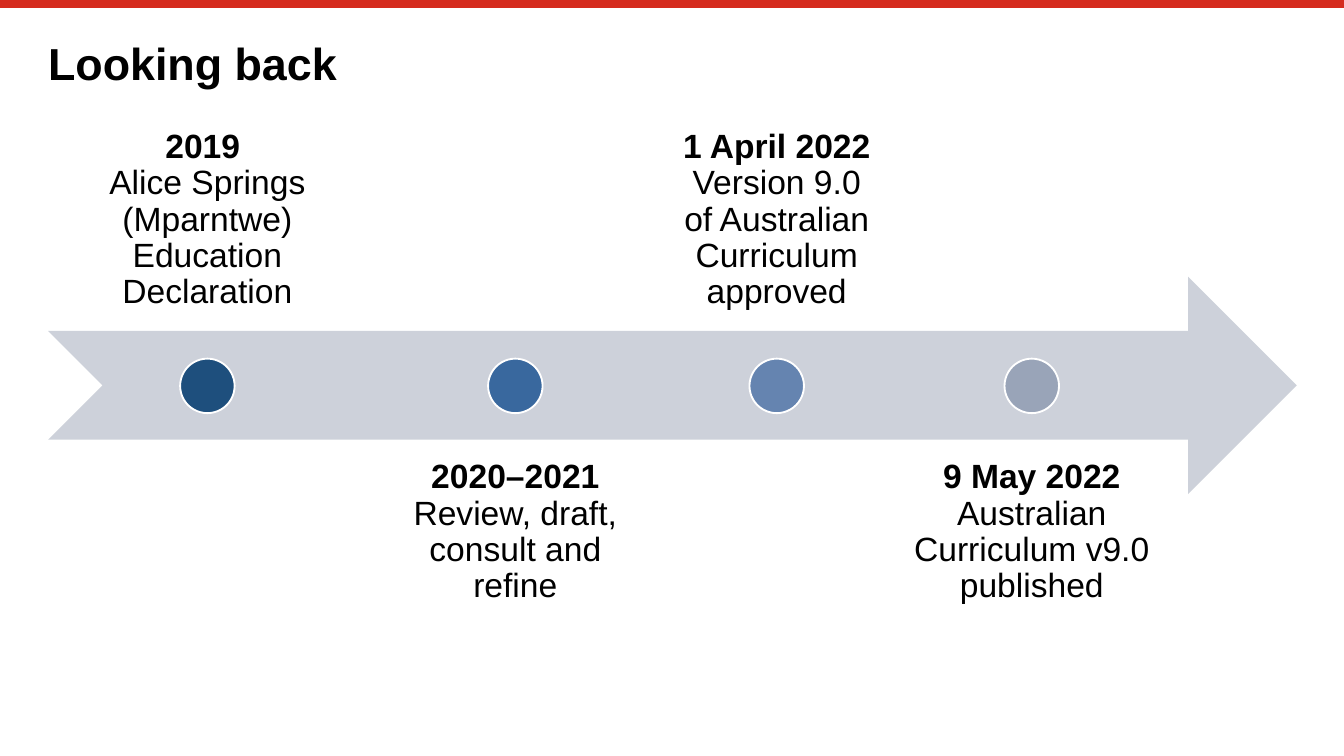
from lxml import etree
from pptx import Presentation
from pptx.dml.color import RGBColor
from pptx.enum.shapes import MSO_CONNECTOR as Link, MSO_SHAPE as Kind
from pptx.enum.text import MSO_ANCHOR as Anchor, MSO_AUTO_SIZE as Fit, PP_ALIGN as Align
from pptx.oxml.ns import qn
from pptx.util import Cm, Pt


def tint(code):
    return RGBColor.from_string(code)


def style(item, **values):
    for name, value in values.items():
        setattr(item, name, value)


deck = Presentation()
style(deck, slide_width=Cm(25.4), slide_height=Cm(14.29))
slide = deck.slides.add_slide(deck.slide_layouts[5])
shapes = slide.shapes

# Red band along the top edge
band = shapes.add_connector(Link.STRAIGHT, 0, Cm(0.08), Cm(25.4), Cm(0.08))
band.line.color.rgb = tint("D52B1E")
band.line.width = Pt(4.2)
etree.SubElement(band._element.spPr, qn("a:effectLst"))

# Title
title = shapes.title
style(title, left=Cm(0.91), top=Cm(0.76), width=Cm(23.6), height=Cm(0.99))
style(title.text_frame, text="Looking back", auto_size=Fit.NONE,
      vertical_anchor=Anchor.MIDDLE, margin_left=0, margin_right=0,
      margin_top=0, margin_bottom=0)
head = title.text_frame.paragraphs[0]
style(head, alignment=Align.LEFT, line_spacing=0.9)
style(head.font, name="Arial", size=Pt(24), bold=True)
head.font.color.rgb = tint("000000")

# Timeline arrow
arrow = shapes.add_shape(Kind.NOTCHED_RIGHT_ARROW, Cm(0.91), Cm(5.23), Cm(23.6), Cm(4.11))
arrow.shadow.inherit = False
arrow.fill.solid()
arrow.fill.fore_color.rgb = tint("CDD1DA")
arrow.line.fill.background()

# Milestones: centre, text width, dot colour, date, event
steps = [
    (3.92, 6.02, "1E4F7D", "2019 ", "Alice Springs (Mparntwe) Education Declaration"),
    (9.74, 5.51, "39689E", "2020–2021", "Review, draft, consult and refine"),
    (14.68, 4.3, "6584B0", "1 April 2022", "Version 9.0 of Australian Curriculum approved"),
    (19.5, 5.26, "99A4B8", "9 May 2022", "Australian Curriculum v9.0 published"),
]
size = 1.03
pad = Cm(0.36)
for i, (mid, width, color, date, event) in enumerate(steps):
    # Labels alternate above and below the arrow
    above = i % 2 == 0
    box = shapes.add_textbox(Cm(mid - width / 2), Cm(2.13 if above else 8.33),
                             Cm(width), Cm(4.11))
    frame = box.text_frame
    style(frame, word_wrap=True, margin_left=pad, margin_right=pad,
          margin_top=pad, margin_bottom=pad,
          vertical_anchor=Anchor.BOTTOM if above else Anchor.TOP)
    para = frame.paragraphs[0]
    style(para, alignment=Align.CENTER, line_spacing=0.9)
    for text, bold in ((date, True), (event, False)):
        if not bold:
            para.add_line_break()
        run = para.add_run()
        run.text = text
        style(run.font, name="Arial", size=Pt(18), bold=bold)
        run.font.color.rgb = tint("000000")

    # Dot on the arrow
    dot = shapes.add_shape(Kind.OVAL, Cm(mid - size / 2), Cm(6.78), Cm(size), Cm(size))
    dot.shadow.inherit = False
    dot.fill.solid()
    dot.fill.fore_color.rgb = tint(color)
    dot.line.color.rgb = tint("FFFFFF")
    dot.line.width = Pt(1)

deck.save("out.pptx")
